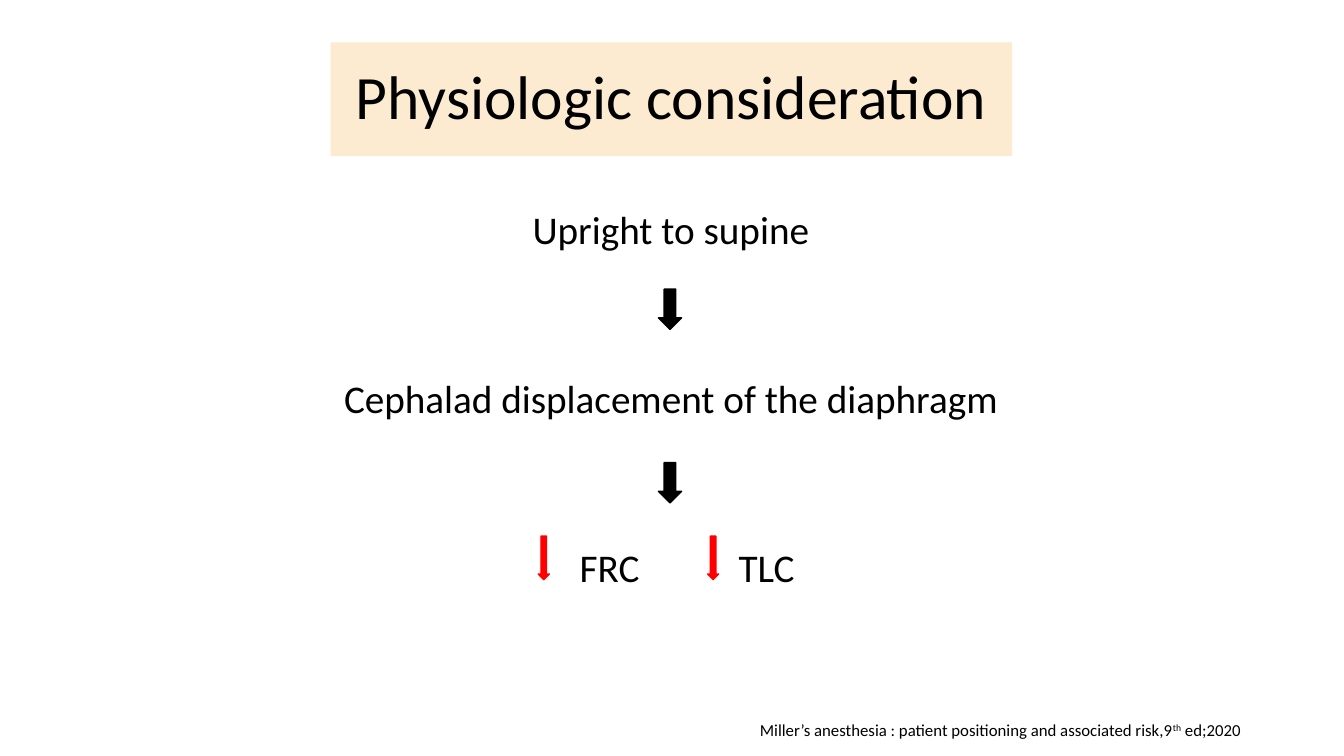
import pptx
import pptx.util
import pptx.dml.color
import pptx.enum.shapes
import pptx.enum.text
import lxml.etree

Pt = pptx.util.Pt
RGBColor = pptx.dml.color.RGBColor
PP_ALIGN = pptx.enum.text.PP_ALIGN

# Content
TITLE = "Physiologic consideration"
STEPS = ["Upright to supine", "Cephalad displacement of the diaphragm"]
CITATION = [
    ("Miller’s anesthesia : patient positioning and associated risk,9", False),
    ("th", True),
    (" ed;2020", False),
]

# Style
FONT = "Calibri"
BLACK = RGBColor(0x00, 0x00, 0x00)
RED = RGBColor(0xFF, 0x00, 0x00)
CREAM = RGBColor(0xFC, 0xEB, 0xD1)

# Layout, in points
SLIDE = (960, 540)
TITLE_BOX = (236.2, 30.2, 486.7, 81.4)
BODY_BOX = (64.1, 146.9, 830.2, 220)
CITATION_BOX = (535.7, 510.5, 424.3, 21.6)
FIRST_GAP, STEP_GAP = 10, 90.3
RESULT_TOP, RESULT_SIZE = 388.3, (80, 38)
# label, label left, arrow centre x
RESULTS = [("FRC", 407, 388.4), ("TLC", 520.5, 509.4)]
# centre x, centre y, width, height, colour
ARROWS = [(478.6, y, 16.6, 28.8, BLACK) for y in (221, 344.9)]
ARROWS += [(x, 398.5, 7.9, 31, RED) for _, _, x in RESULTS]


def place(sp, box):
    sp.left, sp.top, sp.width, sp.height = [Pt(v) for v in box]


def style(r, size):
    r.font.name = FONT
    r.font.size = Pt(size)
    r.font.color.rgb = BLACK


def add_text_box(box):
    sp = s.shapes.add_textbox(0, 0, 0, 0)
    place(sp, box)
    sp.text_frame.word_wrap = True
    return sp.text_frame.paragraphs[0]


prs = pptx.Presentation()
prs.slide_width, prs.slide_height = [Pt(v) for v in SLIDE]
s = prs.slides.add_slide(prs.slide_layouts[1])

# Title
title = s.shapes.title
place(title, TITLE_BOX)
title.fill.solid()
title.fill.fore_color.rgb = CREAM
tf = title.text_frame
tf.text = TITLE
tf.auto_size = pptx.enum.text.MSO_AUTO_SIZE.NONE
tf.vertical_anchor = pptx.enum.text.MSO_ANCHOR.MIDDLE
p = tf.paragraphs[0]
p.alignment = PP_ALIGN.CENTER
p.line_spacing = 0.9
style(p.runs[0], 44)

# Steps of the chain
body = s.placeholders[1]
place(body, BODY_BOX)
tf = body.text_frame
tf.text = "\n".join(STEPS)
tf.auto_size = pptx.enum.text.MSO_AUTO_SIZE.NONE
for i, p in enumerate(tf.paragraphs):
    p.alignment = PP_ALIGN.CENTER
    p.line_spacing = 0.9
    p.space_before = Pt(STEP_GAP if i else FIRST_GAP)
    style(p.runs[0], 28)
    pPr = p._p.get_or_add_pPr()
    pPr.set("marL", "0")
    pPr.set("indent", "0")
    lxml.etree.SubElement(pPr, pptx.oxml.ns.qn("a:buNone"))

# Results beside their red arrows
for label, left, _ in RESULTS:
    p = add_text_box((left, RESULT_TOP, *RESULT_SIZE))
    p.text = label
    p.line_spacing = 0.9
    style(p.runs[0], 28)

# Arrows
for cx, cy, w, h, color in ARROWS:
    sp = s.shapes.add_shape(pptx.enum.shapes.MSO_SHAPE.DOWN_ARROW, 0, 0, 0, 0)
    place(sp, (cx - w / 2, cy - h / 2, w, h))
    sp.shadow.inherit = False
    sp.fill.solid()
    sp.fill.fore_color.rgb = color
    sp.line.color.rgb = color
    sp.line.width = Pt(1)

# Citation
p = add_text_box(CITATION_BOX)
for text, raised in CITATION:
    r = p.add_run()
    r.text = text
    style(r, 12)
    if raised:
        r.font._element.set("baseline", "30000")

prs.save("out.pptx")
